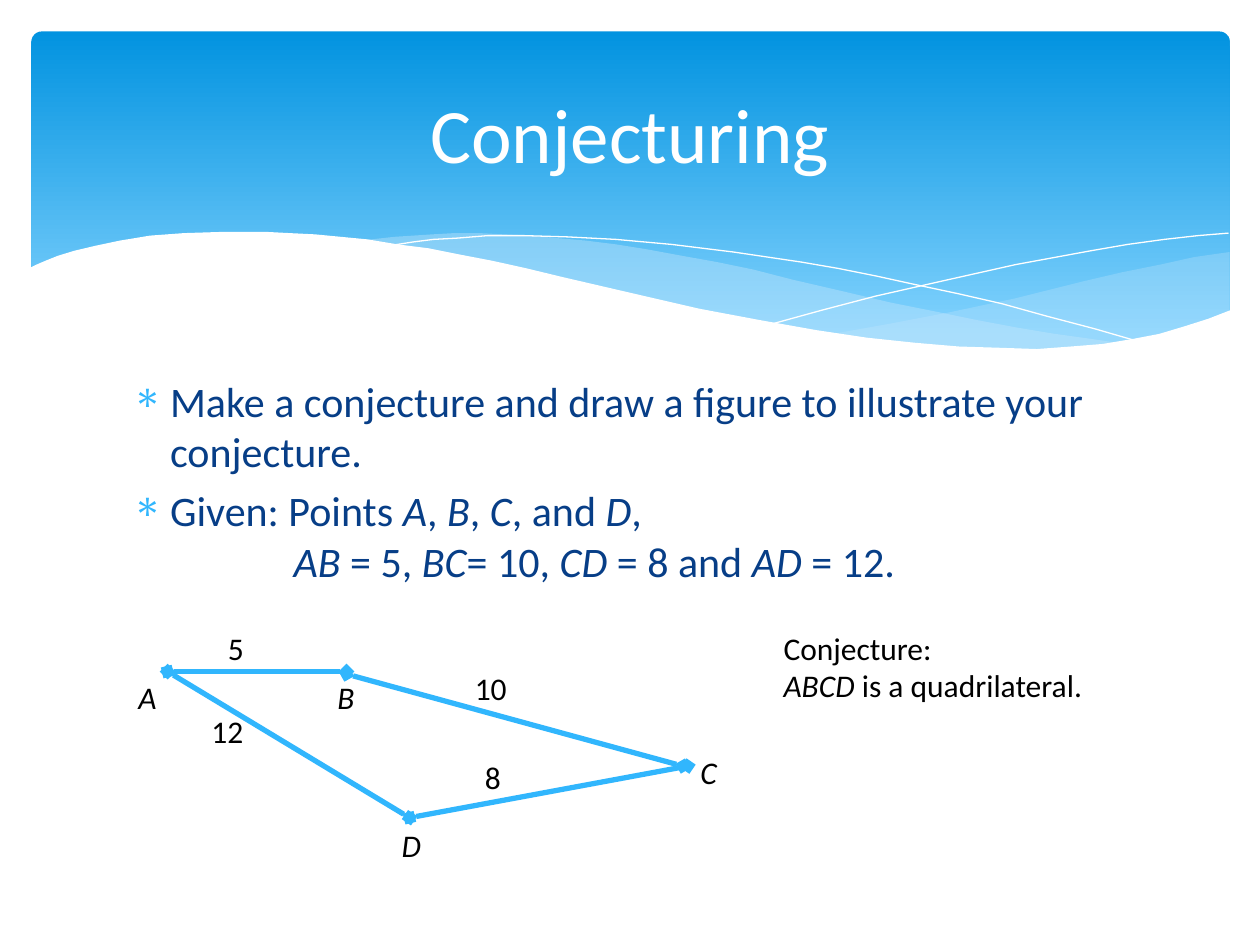
"""Builds a slide on conjecturing with a labelled quadrilateral under a wave banner."""
from lxml import etree
from pptx import Presentation
from pptx.dml.color import RGBColor
from pptx.enum import shapes, text
from pptx.oxml import ns
from pptx.util import Inches, Pt

FONT = "Calibri"
WHITE = RGBColor(0xFF, 0xFF, 0xFF)
BLACK = RGBColor(0, 0, 0)
NAVY = RGBColor(0x07, 0x3E, 0x87)
SKY = RGBColor(0x31, 0xB6, 0xFD)
PALE = RGBColor(0xC6, 0xE7, 0xFC)
BANNER = [(0, RGBColor(0x02, 0x93, 0xE0)), (0.9, RGBColor(0x83, 0xD3, 0xFE))]

TITLE = "Conjecturing"
BULLETS = [
    (True, ["Make a conjecture and draw a figure to illustrate your conjecture."]),
    (True, ["Given: Points ", "A", ", ", "B", ", ", "C", ", and ", "D", ","]),
    (False, ["", "AB", " = 5, ", "BC", "= 10, ", "CD", " = 8 and ", "AD", " = 12."]),
]
CONJECTURE = [["Conjecture:"], ["", "ABCD", " is a quadrilateral."]]
VERTEX_LABELS = [("A", 1, 5.33), ("B", 2.58, 5.33), ("C", 5.46, 5.93), ("D", 3.09, 6.51)]
LENGTH_LABELS = [("5", 1.71, 4.94), ("10", 3.67, 5.26), ("8", 3.75, 5.97), ("12", 1.58, 5.6)]
SIDES = [
    (1.33, 5.33, 2.75, 5.33),
    (2.75, 5.35, 5.42, 6.08),
    (5.46, 6.08, 3.25, 6.49),
    (3.25, 6.49, 1.33, 5.33),
]

RIGHT_WAVE = [
    (9.76, 2), (9.48, 2.04), (9.21, 2.1), (8.91, 2.16), (8.61, 2.23), (8.05, 2.37),
    (7.53, 2.48), (7.06, 2.57), (6.61, 2.65), (6.91, 2.69), (7.19, 2.72), (7.45, 2.75),
    (7.69, 2.77), (8.03, 2.78), (8.35, 2.77), (8.63, 2.75), (8.89, 2.72), (9.13, 2.67),
    (9.35, 2.62), (9.49, 2.57), (9.63, 2.52), (9.76, 2.47),
]
LEFT_WAVE = [
    (8.93, 2.73), (8.66, 2.69), (8.37, 2.65), (8.07, 2.6), (7.75, 2.54), (7.41, 2.47),
    (7.06, 2.4), (6.68, 2.31), (6.29, 2.22), (5.98, 2.14), (5.69, 2.08), (5.41, 2.03),
    (5.14, 1.98), (4.89, 1.94), (4.65, 1.91), (4.42, 1.89), (4.2, 1.87), (3.99, 1.86),
    (3.8, 1.85), (3.61, 1.85), (3.44, 1.86), (3.13, 1.88), (2.86, 1.91), (3.23, 1.96),
    (3.62, 2.03), (4.04, 2.11), (4.49, 2.22), (4.91, 2.32), (5.3, 2.4), (5.66, 2.48),
    (6.01, 2.55), (6.34, 2.61), (6.65, 2.66), (6.95, 2.7), (7.22, 2.74), (7.48, 2.76),
    (7.73, 2.77), (7.96, 2.78), (8.28, 2.78), (8.57, 2.77), (8.76, 2.75),
]
FALLING_LINE = [
    (3.09, 1.95), (3.28, 1.92), (3.44, 1.9), (3.63, 1.89), (3.87, 1.87), (4.16, 1.87),
    (4.5, 1.88), (4.89, 1.9), (5.33, 1.94), (5.82, 2), (6.36, 2.08), (6.65, 2.13),
    (6.95, 2.19), (7.27, 2.26), (7.6, 2.33), (7.95, 2.41), (8.31, 2.51), (8.69, 2.61),
    (9.07, 2.72),
]
RISING_LINE = [
    (6.13, 2.57), (6.53, 2.46), (6.95, 2.35), (7.48, 2.23), (8.06, 2.1), (8.66, 1.99),
    (8.95, 1.94), (9.24, 1.9), (9.51, 1.87), (9.75, 1.85),
]
WHITE_WAVE = [
    (9.77, 2.46), (9.59, 2.53), (9.4, 2.59), (9.2, 2.65), (8.99, 2.69), (8.75, 2.73),
    (8.5, 2.75), (8.23, 2.77), (7.93, 2.76), (7.61, 2.75), (7.26, 2.72), (6.88, 2.68),
    (6.48, 2.62), (6.03, 2.54), (5.55, 2.45), (5.03, 2.33), (4.47, 2.2), (4.18, 2.13),
    (3.91, 2.07), (3.65, 2.02), (3.4, 1.97), (3.16, 1.94), (2.92, 1.9), (2.71, 1.88),
    (2.5, 1.86), (2.3, 1.85), (2.11, 1.84), (1.77, 1.84), (1.46, 1.85), (1.19, 1.87),
    (0.95, 1.91), (0.76, 1.95), (0.59, 1.99), (0.46, 2.03), (0.36, 2.07), (0.29, 2.1),
    (0.23, 2.13), (0.23, 3.29), (9.77, 3.29),
]
AREAS = [(RIGHT_WAVE, PALE, 29), (LEFT_WAVE, PALE, 40), (WHITE_WAVE, WHITE, 100)]


def add_xml(parent, tag, **attributes):
    return etree.SubElement(parent, ns.qn(tag), attributes)


def draw_path(page, points, closed):
    corners = [(Inches(x), Inches(y)) for x, y in points]
    builder = page.shapes.build_freeform(*corners[0], scale=1.0)
    builder.add_line_segments(corners[1:], close=closed)
    shape = builder.convert_to_shape()
    shape.shadow.inherit = False
    return shape


def draw_area(page, points, color, opacity):
    area = draw_path(page, points, True)
    area.line.fill.background()
    area.fill.solid()
    area.fill.fore_color.rgb = color
    for tint in area.element.spPr.iterfind(ns.qn("a:solidFill") + "/" + ns.qn("a:srgbClr")):
        add_xml(tint, "a:alpha", val=str(opacity * 1000))


def draw_banner(page):
    banner = page.shapes.add_shape(shapes.MSO_SHAPE.ROUNDED_RECTANGLE, Inches(0.25), Inches(0.25),
                                   Inches(9.51), Inches(2.7))
    banner.adjustments[0] = 0.03
    banner.shadow.inherit = False
    banner.line.fill.background()
    banner.fill.gradient()
    banner.fill.gradient_angle = 270
    for stop, (position, color) in zip(banner.fill.gradient_stops, BANNER):
        stop.position = position
        stop.color.rgb = color
    for area in AREAS[:2]:
        draw_area(page, *area)
    for points in (FALLING_LINE, RISING_LINE):
        curve = draw_path(page, points, False)
        curve.fill.background()
        curve.line.color.rgb = WHITE
        curve.line.width = Pt(0)
    draw_area(page, *AREAS[2])


def write(para, pieces, size, color):
    """Adds the pieces as runs, with every second one in italics."""
    for index, piece in enumerate(pieces):
        if piece:
            span = para.add_run()
            span.text = piece
            span.font.name, span.font.size = FONT, Pt(size)
            span.font.color.rgb = color
            span.font.italic = index % 2 == 1


def place(box, left, top, width, height):
    box.left, box.top = Inches(left), Inches(top)
    box.width, box.height = Inches(width), Inches(height)


def fill_title(page):
    title = page.shapes.title
    place(title, 0.5, 0.37, 9, 1.37)
    title.text_frame.vertical_anchor = text.MSO_ANCHOR.MIDDLE
    para = title.text_frame.paragraphs[0]
    para.alignment = text.PP_ALIGN.CENTER
    write(para, [TITLE], 44, WHITE)
    page.shapes.element.append(title.element)


def fill_body(page):
    body = page.placeholders[1]
    place(body, 0.95, 2.93, 8.1, 1.91)
    frame = body.text_frame
    frame.auto_size = text.MSO_AUTO_SIZE.NONE
    for index, (bulleted, pieces) in enumerate(BULLETS):
        para = frame.add_paragraph() if index else frame.paragraphs[0]
        para.space_before = Pt(4.8 if bulleted else 0)
        write(para, pieces, 24, NAVY)
        layout = para._p.get_or_add_pPr()
        layout.set("marL", str(Inches(0.3 if bulleted else 1.28)))
        layout.set("indent", str(Inches(-0.3 if bulleted else 0)))
        if bulleted:
            add_xml(add_xml(layout, "a:buClr"), "a:srgbClr", val=str(SKY))
            add_xml(layout, "a:buFont", typeface="Symbol")
            add_xml(layout, "a:buChar", char="∗")
        else:
            add_xml(layout, "a:buNone")
    page.shapes.element.append(body.element)


def add_label(page, lines, left, top, width=0.67, height=0.4):
    box = page.shapes.add_textbox(Inches(left), Inches(top), Inches(width), Inches(height))
    frame = box.text_frame
    frame.word_wrap = True
    frame.auto_size = text.MSO_AUTO_SIZE.SHAPE_TO_FIT_TEXT
    for index, pieces in enumerate(lines):
        para = frame.add_paragraph() if index else frame.paragraphs[0]
        write(para, pieces, 18, BLACK)


def draw_figure(page):
    for ends in SIDES:
        side = page.shapes.add_connector(shapes.MSO_CONNECTOR.STRAIGHT, *map(Inches, ends))
        side.line.color.rgb = SKY
        side.line.width = Pt(3)
        outline = side.line._get_or_add_ln()
        for end in ("a:headEnd", "a:tailEnd"):
            add_xml(outline, end, type="diamond")
        add_xml(side.element.spPr, "a:effectLst")
    for name, left, top in VERTEX_LABELS:
        add_label(page, [["", name]], left, top)
    for length, left, top in LENGTH_LABELS:
        add_label(page, [[length]], left, top)
    add_label(page, CONJECTURE, 6.12, 4.94, 3.12, 0.71)


def main():
    deck = Presentation()
    deck.slide_width, deck.slide_height = Inches(10), Inches(7.5)
    page = deck.slides.add_slide(deck.slide_layouts[1])
    draw_banner(page)
    fill_body(page)
    fill_title(page)
    draw_figure(page)
    deck.save("out.pptx")


if __name__ == "__main__":
    main()
